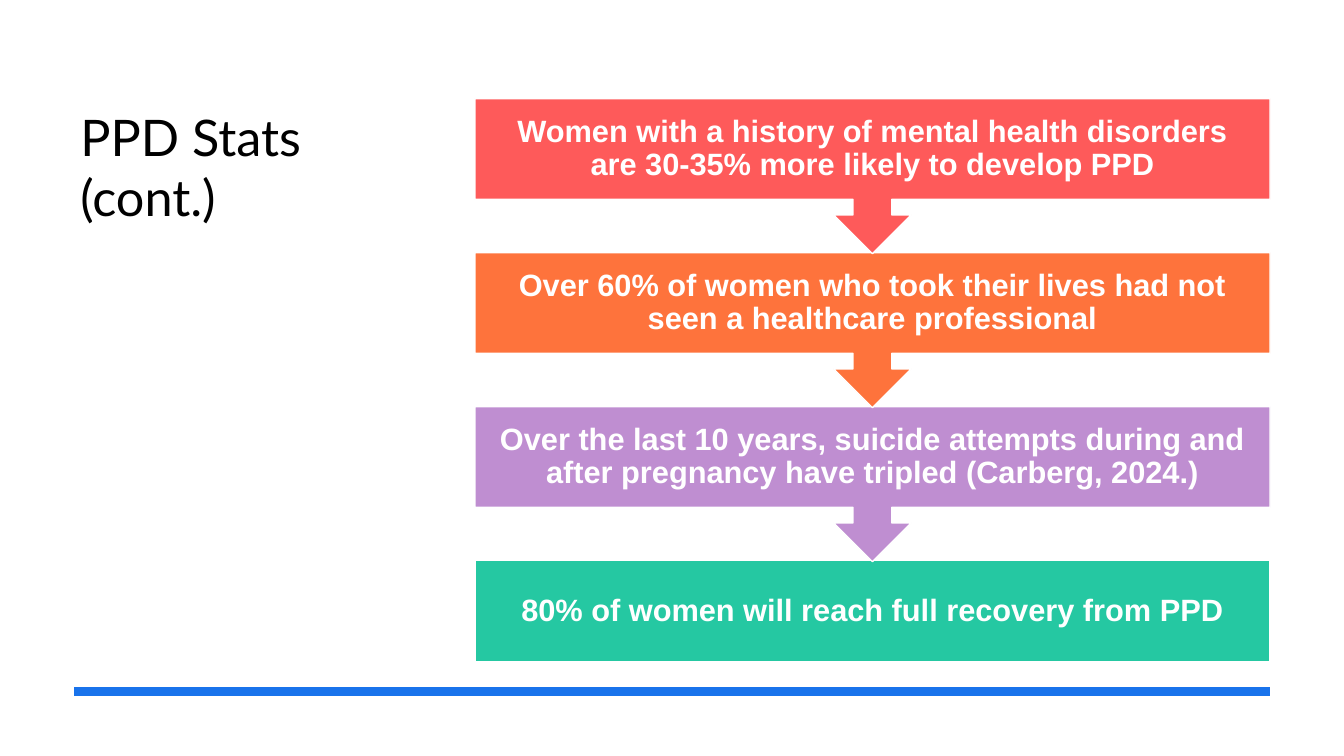
from lxml.etree import SubElement
from pptx import Presentation
from pptx.dml.color import RGBColor
from pptx.enum.shapes import MSO_CONNECTOR, MSO_SHAPE
from pptx.enum.text import MSO_ANCHOR, PP_ALIGN
from pptx.oxml.ns import qn
from pptx.util import Pt

COLORS = {
    "title": "000000",
    "white": "FFFFFF",
    "rule": "1973EB",
    "history": "FE5A5A",
    "unseen": "FE733C",
    "attempts": "BF8ED1",
    "recovery": "25C8A2",
}

STATS = [
    ("history", "Women with a history of mental health disorders are 30-35% more likely to develop PPD"),
    ("unseen", "Over 60% of women who took their lives had not seen a healthcare professional"),
    ("attempts", "Over the last 10 years, suicide attempts during and after pregnancy have tripled (Carberg, 2024.)"),
    ("recovery", "80% of women will reach full recovery from PPD"),
]

STAT_LEFT, STAT_TOP, STAT_WIDTH = 339.2, 70.5, 568
STAT_STEP, BOX_HEIGHT, CALLOUT_HEIGHT = 110, 72, 110.7
STAT_INSET = 12.2


def color(name):
    return RGBColor.from_string(COLORS[name])


def add_run(paragraph, text, font, size, color_name, bold=False):
    run = paragraph.add_run()
    run.text = text
    run.font.name = font
    run.font.size = Pt(size)
    run.font.bold = bold
    run.font.color.rgb = color(color_name)


def add_title(slide, text):
    title = slide.shapes.add_textbox(Pt(50.4), Pt(72), Pt(236), Pt(327.6))
    title.text_frame.word_wrap = True
    add_run(title.text_frame.paragraphs[0], text, "Lato", 36, "title")


def add_rule(slide):
    rule = slide.shapes.add_connector(
        MSO_CONNECTOR.STRAIGHT, Pt(53.2), Pt(493.9), Pt(907.2), Pt(493.9))
    rule.line.color.rgb = color("rule")
    rule.line.width = Pt(6)
    SubElement(rule._element.spPr, qn("a:effectLst"))


def add_stat(slide, position, color_name, text, is_last):
    preset = MSO_SHAPE.RECTANGLE if is_last else MSO_SHAPE.DOWN_ARROW_CALLOUT
    height = BOX_HEIGHT if is_last else CALLOUT_HEIGHT
    stat = slide.shapes.add_shape(
        preset, Pt(STAT_LEFT), Pt(STAT_TOP + position * STAT_STEP),
        Pt(STAT_WIDTH), Pt(height))
    stat.shadow.inherit = False
    stat.fill.solid()
    stat.fill.fore_color.rgb = color(color_name)
    stat.line.color.rgb = color("white")
    stat.line.width = Pt(1)

    frame = stat.text_frame
    frame.word_wrap = True
    frame.vertical_anchor = MSO_ANCHOR.MIDDLE
    frame.margin_left = frame.margin_right = Pt(STAT_INSET)
    frame.margin_top = frame.margin_bottom = Pt(STAT_INSET)
    statement = frame.paragraphs[0]
    statement.alignment = PP_ALIGN.CENTER
    statement.line_spacing = 0.9
    add_run(statement, text, "Arial", 22, "white", bold=True)


def main():
    deck = Presentation()
    deck.slide_width, deck.slide_height = Pt(960), Pt(540)
    slide = deck.slides.add_slide(deck.slide_layouts[6])

    # Heading and bottom rule
    add_title(slide, "PPD Stats (cont.)")
    add_rule(slide)

    # Chain of statistics, built upwards so each arrow tip overlaps the next box
    last = len(STATS) - 1
    for position, (color_name, text) in reversed(list(enumerate(STATS))):
        add_stat(slide, position, color_name, text, position == last)

    deck.save("out.pptx")


if __name__ == "__main__":
    main()
